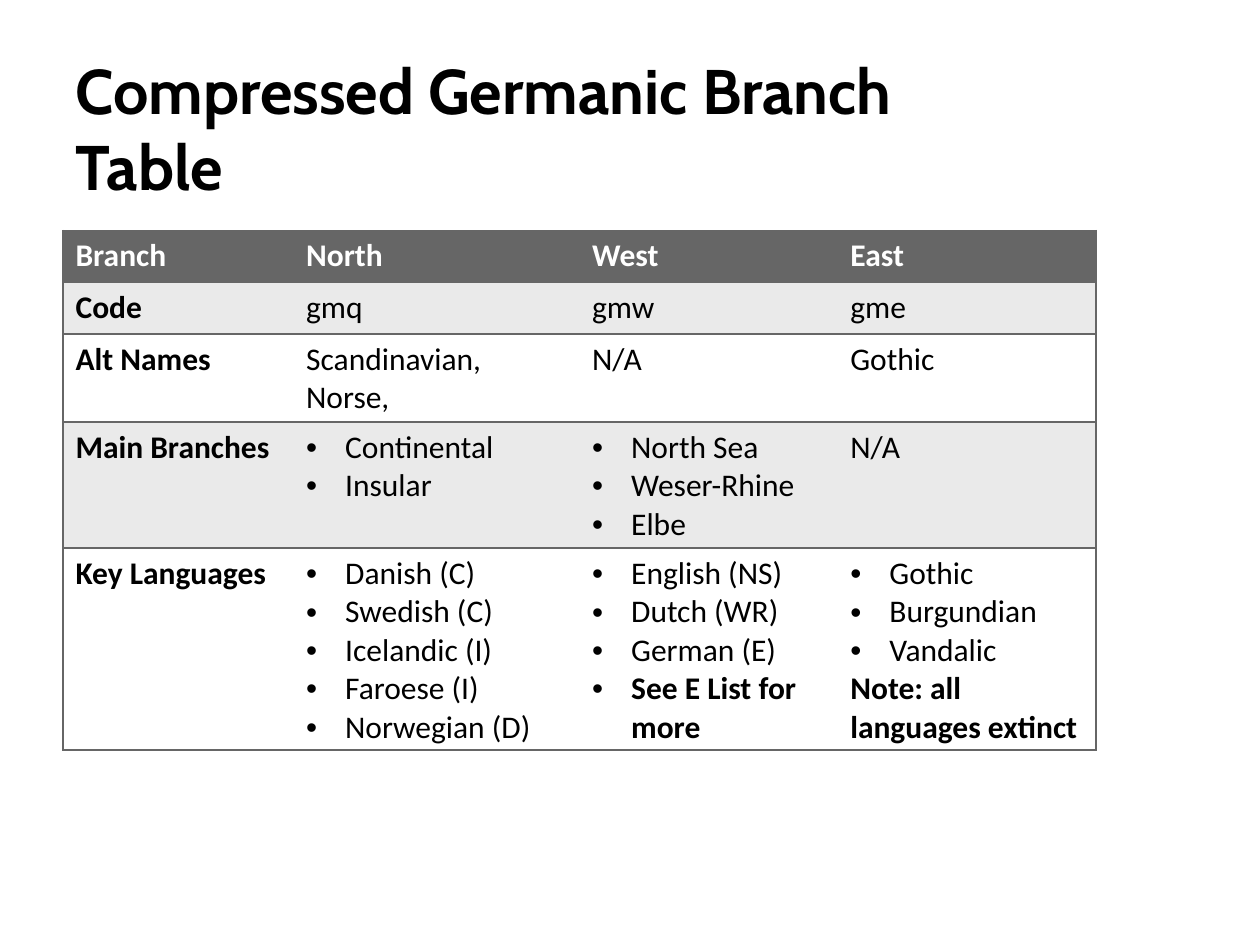
from dataclasses import dataclass

from lxml import etree
from pptx import Presentation
from pptx import util as u
from pptx.dml.color import RGBColor
from pptx.enum import text
from pptx.oxml import ns


@dataclass(frozen=True)
class Theme:
    title_font: str = "Cabin"
    body_font: str = "Calibri"
    title_size: int = 36
    body_size: int = 18
    ink: str = "000000"
    header_ink: str = "FFFFFF"
    header_fill: str = "666666"
    band_fill: str = "EAEAEA"
    plain_fill: str = "FFFFFF"
    rule: str = "666666"


@dataclass(frozen=True)
class Line:
    words: str
    bullet: bool = False
    bold: bool = False


THEME = Theme()
COLUMN_WIDTHS = (1.83, 2.27, 2.05, 2.05)
ROW_HEIGHT = 0.41
BULLET_INDENT = u.Inches(0.31)


def plain(words):
    return [Line(words)]


def bullets(*items):
    return [Line(item, bullet=True) for item in items]


BRANCHES = [
    [plain("Branch"), plain("North"), plain("West"), plain("East")],
    [plain("Code"), plain("gmq"), plain("gmw"), plain("gme")],
    [plain("Alt Names"), plain("Scandinavian, Norse,"), plain("N/A"), plain("Gothic")],
    [
        plain("Main Branches"),
        bullets("Continental", "Insular"),
        bullets("North Sea", "Weser-Rhine", "Elbe"),
        plain("N/A"),
    ],
    [
        plain("Key Languages"),
        bullets("Danish (C)", "Swedish (C)", "Icelandic (I)", "Faroese (I)", "Norwegian (D)"),
        bullets("English (NS)", "Dutch (WR)", "German (E)")
        + [Line("See E List for more", bullet=True, bold=True)],
        bullets("Gothic", "Burgundian", "Vandalic")
        + [Line("Note: all languages extinct", bold=True)],
    ],
]


def style_runs(paragraph, font, size, color, bold):
    for run in paragraph.runs:
        run.font.name = font
        run.font.size = u.Pt(size)
        run.font.bold = bold
        run.font.color.rgb = RGBColor.from_string(color)


def add_bullet(paragraph):
    properties = paragraph._p.get_or_add_pPr()
    properties.set("marL", str(BULLET_INDENT))
    properties.set("indent", str(-BULLET_INDENT))
    etree.SubElement(properties, ns.qn("a:buFont"), typeface="Arial")
    etree.SubElement(properties, ns.qn("a:buChar"), char="•")


def set_borders(cell, ruled_sides):
    """Rule the given sides (letters of LRTB) and clear the others."""
    properties = cell._tc.get_or_add_tcPr()
    for side in "LRTB":
        border = etree.SubElement(properties, ns.qn(f"a:ln{side}"), w=str(u.Pt(1)))
        if side in ruled_sides:
            fill = etree.SubElement(border, ns.qn("a:solidFill"))
            etree.SubElement(fill, ns.qn("a:srgbClr"), val=THEME.rule)
        else:
            etree.SubElement(border, ns.qn("a:noFill"))


def fill_cell(cell, lines, fill, ink, bold):
    cell.fill.solid()
    cell.fill.fore_color.rgb = RGBColor.from_string(fill)
    cell.text_frame.text = "\n".join(line.words for line in lines)
    for paragraph, line in zip(cell.text_frame.paragraphs, lines):
        if line.bullet:
            add_bullet(paragraph)
        style_runs(paragraph, THEME.body_font, THEME.body_size, ink, bold or line.bold)


def add_title(slide, words):
    title = slide.shapes.add_textbox(
        u.Inches(0.5), u.Inches(0.41), u.Inches(7.89), u.Inches(1.25)
    )
    frame = title.text_frame
    frame.word_wrap = True
    frame.vertical_anchor = text.MSO_ANCHOR.BOTTOM
    frame.text = words
    style_runs(frame.paragraphs[0], THEME.title_font, THEME.title_size, THEME.ink, True)


def add_branch_table(slide, rows):
    holder = slide.shapes.add_table(
        len(rows), len(COLUMN_WIDTHS),
        u.Inches(0.5), u.Inches(1.83), u.Inches(8.19), u.Inches(4.11),
    )
    table = holder.table
    for column, width in zip(table.columns, COLUMN_WIDTHS):
        column.width = u.Inches(width)
    last_column = len(COLUMN_WIDTHS) - 1
    for r, row in enumerate(rows):
        table.rows[r].height = u.Inches(ROW_HEIGHT)
        header = r == 0
        band = THEME.band_fill if r % 2 else THEME.plain_fill
        fill = THEME.header_fill if header else band
        ink = THEME.header_ink if header else THEME.ink
        for c, lines in enumerate(row):
            cell = table.cell(r, c)
            set_borders(cell, "TB" + {0: "L", last_column: "R"}.get(c, ""))
            fill_cell(cell, lines, fill, ink, bold=header or c == 0)
    # Rows grow with their text, so the frame is taller than their minimum heights.
    holder.height = u.Inches(4.11)


def main():
    deck = Presentation()
    deck.slide_width, deck.slide_height = u.Inches(10), u.Inches(7.5)
    slide = deck.slides.add_slide(deck.slide_layouts[6])
    add_title(slide, "Compressed Germanic Branch Table")
    add_branch_table(slide, BRANCHES)
    deck.save("out.pptx")


if __name__ == "__main__":
    main()
